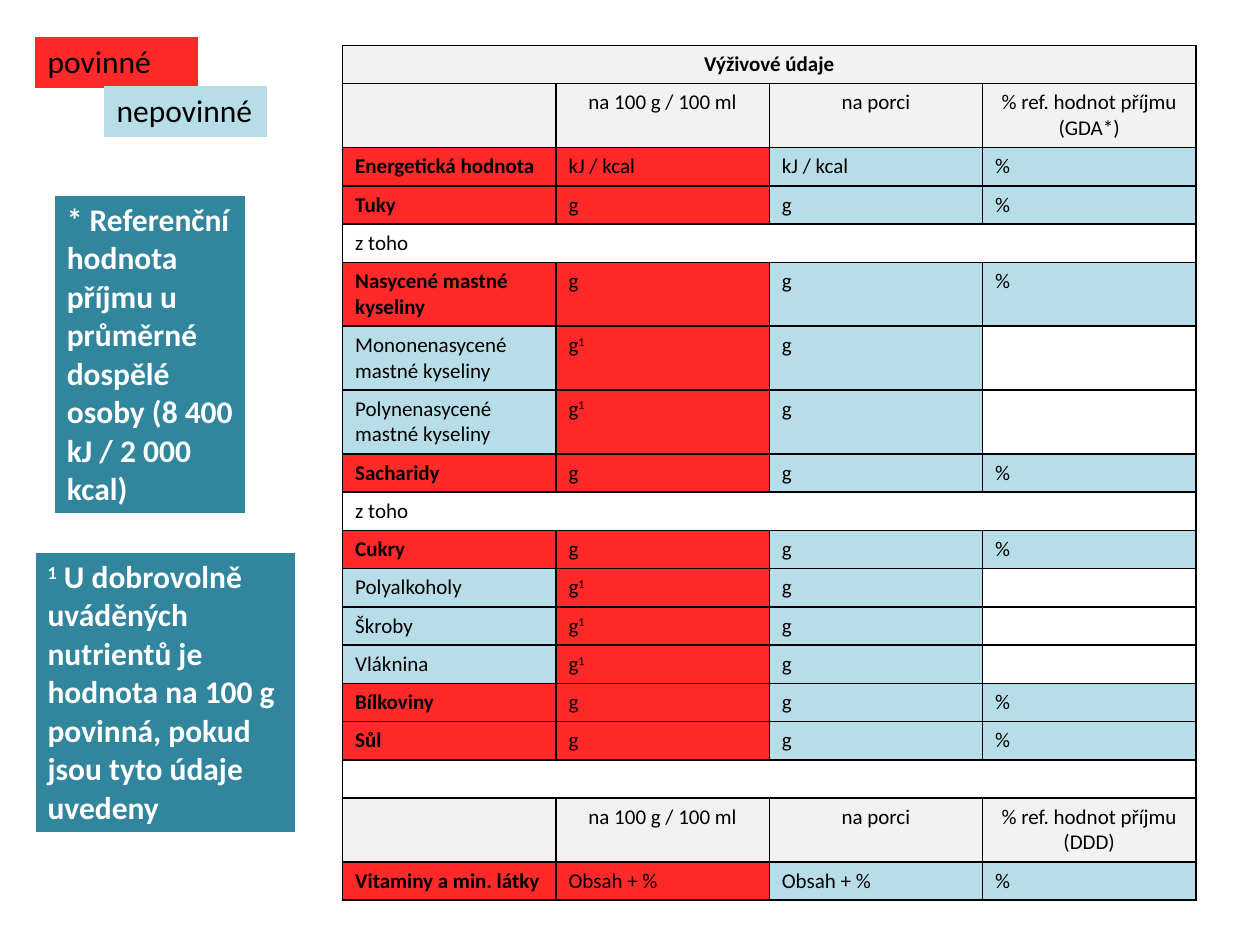
from dataclasses import dataclass

from lxml import etree
from pptx import Presentation
from pptx.dml.color import RGBColor
from pptx.enum.text import PP_ALIGN
from pptx.oxml.ns import qn
from pptx.util import Pt

RED = RGBColor(0xFF, 0x29, 0x29)
BLUE = RGBColor(0xB7, 0xDE, 0xE8)
TEAL = RGBColor(0x31, 0x85, 0x9C)
GREY = RGBColor(0xF2, 0xF2, 0xF2)
BLACK = RGBColor(0, 0, 0)
WHITE = RGBColor(0xFF, 0xFF, 0xFF)

PLAIN_STYLE = "{2D5ABB26-0587-4C30-8999-92F81FD0307C}"
FOOTNOTE = "¹"
BLACK_GRID = {"lnL": 1, "lnR": 1, "lnT": 1, "lnB": 1}
WHITE_FRAME = {"lnL": 1, "lnR": 1, "lnT": 1, "lnB": 3}


@dataclass
class Label:
    """A single-cell table: a legend key or a note."""
    text: str
    left: float
    top: float
    width: float
    height: float
    fill: RGBColor
    color: RGBColor = BLACK
    bold: bool = False


@dataclass
class Row:
    """A table row; a single text spans all the columns."""
    texts: list[str]
    fills: list[RGBColor | None]
    lines: int = 1
    bold: bool = False
    centered: bool = False


def header(reference: str) -> Row:
    return Row(["", "na 100 g / 100 ml", "na porci", f"% ref. hodnot příjmu ({reference})"],
               [GREY] * 4, lines=2, centered=True)


def mandatory(name: str, unit: str = "g", lines: int = 1) -> Row:
    return Row([name, unit, unit, "%"], [RED, RED, BLUE, BLUE], lines, bold=True)


def optional(name: str, lines: int = 1) -> Row:
    return Row([name, "g" + FOOTNOTE, "g", ""], [BLUE, RED, BLUE, None], lines)


def spanning(text: str) -> Row:
    return Row([text], [None])


LABELS = [
    Label("povinné", 20, 21, 93, 29.2, RED),
    Label("nepovinné", 59.5, 49, 93, 29.2, BLUE),
    Label("* Referenční hodnota příjmu u průměrné dospělé osoby (8 400 kJ / 2 000 kcal)",
          31, 111.5, 109.5, 180, TEAL, WHITE, True),
    Label(FOOTNOTE + " U dobrovolně uváděných nutrientů je hodnota na 100 g povinná, "
          "pokud jsou tyto údaje uvedeny", 20, 315.5, 149, 158, TEAL, WHITE, True),
]

ROWS = [
    Row(["Výživové údaje"], [GREY], bold=True, centered=True),
    header("GDA*"),
    mandatory("Energetická hodnota", "kJ / kcal"),
    mandatory("Tuky"),
    spanning("z toho"),
    mandatory("Nasycené mastné kyseliny", lines=2),
    optional("Mononenasycené mastné kyseliny", lines=2),
    optional("Polynenasycené mastné kyseliny", lines=2),
    mandatory("Sacharidy"),
    spanning("z toho"),
    mandatory("Cukry"),
    optional("Polyalkoholy"),
    optional("Škroby"),
    optional("Vláknina"),
    mandatory("Bílkoviny"),
    mandatory("Sůl"),
    spanning(""),
    header("DDD"),
    mandatory("Vitaminy a min. látky", "Obsah + %"),
]


def add_plain_table(slide, rows: int, columns: int, left: float, top: float,
                    width: float, height: float):
    table = slide.shapes.add_table(rows, columns, Pt(left), Pt(top), Pt(width), Pt(height)).table
    table.first_row = table.horz_banding = False
    table._tbl.tblPr.find(qn("a:tableStyleId")).text = PLAIN_STYLE
    return table


def set_borders(cell, color: RGBColor, widths: dict[str, float]) -> None:
    properties = cell._tc.get_or_add_tcPr()
    for index, (side, width) in enumerate(widths.items()):
        line = etree.Element(qn(f"a:{side}"), w=str(Pt(width)))
        fill = etree.SubElement(line, qn("a:solidFill"))
        etree.SubElement(fill, qn("a:srgbClr"), val=str(color))
        properties.insert(index, line)


def fill_cell(cell, color: RGBColor | None) -> None:
    if color is None:
        cell.fill.background()
    else:
        cell.fill.solid()
        cell.fill.fore_color.rgb = color


def write_cell(cell, text: str, size: float, color: RGBColor = BLACK,
               bold: bool = False, centered: bool = False) -> None:
    para = cell.text_frame.paragraphs[0]
    para.alignment = PP_ALIGN.CENTER if centered else PP_ALIGN.LEFT
    font = para.font
    font.name, font.size, font.bold = "Calibri", Pt(size), bold
    font.color.rgb = color
    # The footnote mark becomes a raised 1
    before, mark, after = text.partition(FOOTNOTE)
    for part in filter(None, (before, mark, after)):
        span = para.add_run()
        span.text = "1" if part == FOOTNOTE else part
        if part == FOOTNOTE:
            span.font._element.set("baseline", "30000")
    if not text:
        # An empty cell keeps the row height of its text size
        etree.SubElement(para._p, qn("a:endParaRPr"), sz=str(int(size * 100)))


def add_label(slide, label: Label) -> None:
    table = add_plain_table(slide, 1, 1, label.left, label.top, label.width, label.height)
    cell = table.cell(0, 0)
    fill_cell(cell, label.fill)
    write_cell(cell, label.text, 18, label.color, label.bold)
    if label.color == WHITE:
        set_borders(cell, WHITE, WHITE_FRAME)


def add_nutrition_table(slide, rows: list[Row]) -> None:
    heights = [Pt(21.8 if row.lines == 1 else 36.5) for row in rows]
    table = add_plain_table(slide, len(rows), 4, 195.8, 26, 487.6, sum(heights) / Pt(1))
    for index, row in enumerate(rows):
        table.rows[index].height = heights[index]
        cells = list(table.rows[index].cells)
        for cell in cells:
            set_borders(cell, BLACK, BLACK_GRID)
        if len(row.texts) == 1:
            cells[0].merge(cells[-1])
        for column, (cell, text, fill) in enumerate(zip(cells, row.texts, row.fills)):
            fill_cell(cell, fill)
            write_cell(cell, text, 12, bold=row.bold and column == 0, centered=row.centered)


def main() -> None:
    deck = Presentation()
    deck.slide_width, deck.slide_height = Pt(720), Pt(540)
    slide = deck.slides.add_slide(deck.slide_layouts[6])

    # Nutrition table, then the colour key and the notes
    add_nutrition_table(slide, ROWS)
    for label in LABELS:
        add_label(slide, label)

    deck.save("out.pptx")


if __name__ == "__main__":
    main()
